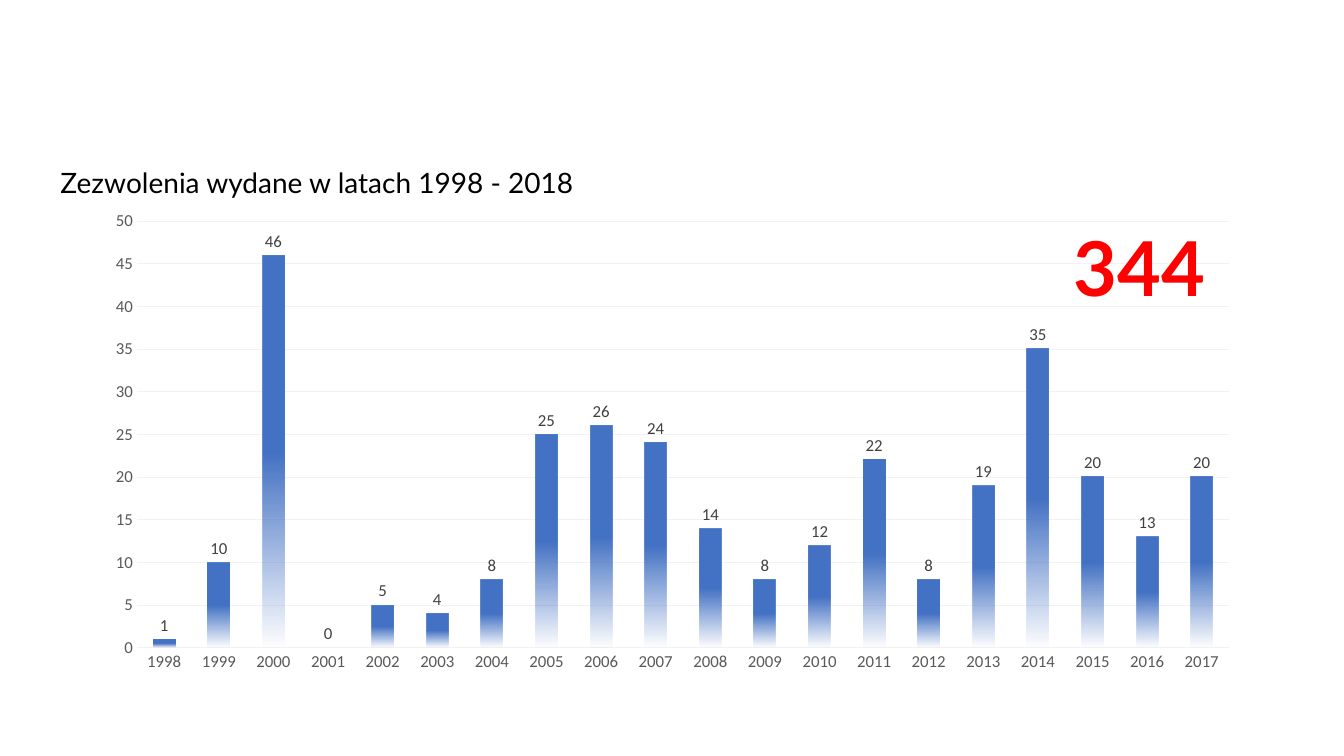
from pptx import Presentation
from pptx.chart.data import CategoryChartData
from pptx.dml.color import RGBColor
from pptx.enum.chart import XL_CHART_TYPE, XL_LABEL_POSITION, XL_TICK_MARK
from pptx.enum.text import MSO_ANCHOR, PP_ALIGN
from pptx.oxml import parse_xml
from pptx.oxml.ns import nsdecls
from pptx.util import Inches, Pt

BLACK = RGBColor(0x00, 0x00, 0x00)
RED = RGBColor(0xFF, 0x00, 0x00)
BLUE = RGBColor(0x44, 0x72, 0xC4)
AXIS_GREY = RGBColor(0x59, 0x59, 0x59)
LABEL_GREY = RGBColor(0x40, 0x40, 0x40)
GRID_GREY = RGBColor(0xF2, 0xF2, 0xF2)


def style_font(font, name, size, color, bold=False):
    font.name = name
    font.size = Pt(size)
    font.bold = bold
    font.color.rgb = color


prs = Presentation()
prs.slide_width = Inches(13.33)
prs.slide_height = Inches(7.5)
slide = prs.slides.add_slide(prs.slide_layouts[5])

# Permits per year
permits = [1, 10, 46, 0, 5, 4, 8, 25, 26, 24,
           14, 8, 12, 22, 8, 19, 35, 20, 13, 20]
permit_data = CategoryChartData()
permit_data.categories = [str(year) for year in range(1998, 2018)]
permit_data.add_series("Series 1", permits)
chart = slide.shapes.add_chart(
    XL_CHART_TYPE.COLUMN_CLUSTERED, Inches(0.92), Inches(2),
    Inches(11.5), Inches(4.76), permit_data).chart
chart.has_legend = False
chart.has_title = False
style_font(chart.font, "Calibri", 10, BLACK)

for axis in (chart.category_axis, chart.value_axis):
    axis.major_tick_mark = XL_TICK_MARK.NONE
    axis.minor_tick_mark = XL_TICK_MARK.NONE
    axis.format.line.fill.background()
    style_font(axis.tick_labels.font, "Calibri", 12, AXIS_GREY)
chart.value_axis.minimum_scale = 0
chart.value_axis.maximum_scale = 50
chart.value_axis.major_unit = 5
gridline = chart.value_axis.major_gridlines.format.line
gridline.color.rgb = GRID_GREY
gridline.width = Pt(0.75)

plot = chart.plots[0]
plot.gap_width = 150
plot.vary_by_categories = False
plot.has_data_labels = True
labels = plot.data_labels
labels.show_value = True
labels.position = XL_LABEL_POSITION.OUTSIDE_END
style_font(labels.font, "Calibri", 12, LABEL_GREY)

# Bars stay solid to the middle, then fade out towards the axis
bars = plot.series[0]
bars.invert_if_negative = False
bars.format.fill.background()
bar_properties = bars._element.spPr
bar_properties.replace(bar_properties[0], parse_xml(
    f'<a:gradFill {nsdecls("a")} rotWithShape="1"><a:gsLst>'
    f'<a:gs pos="0"><a:srgbClr val="{BLUE}"/></a:gs>'
    f'<a:gs pos="50000"><a:srgbClr val="{BLUE}"/></a:gs>'
    f'<a:gs pos="100000"><a:srgbClr val="{BLUE}"><a:alpha val="0"/></a:srgbClr></a:gs>'
    '</a:gsLst><a:lin ang="5400000" scaled="0"/></a:gradFill>'))

# Heading and total
heading = slide.shapes.title
heading.left, heading.top = Inches(0.5), Inches(1.59)
heading.width, heading.height = Inches(8.43), Inches(0.44)
total = slide.shapes.add_textbox(Inches(10.55), Inches(2.14), Inches(1.87), Inches(1.01))

for box, wording, size, color, bold in (
        (heading, "Zezwolenia wydane w latach 1998 - 2018", 20, BLACK, False),
        (total, "344", 54, RED, True)):
    frame = box.text_frame
    frame.text = wording
    frame.word_wrap = True
    frame.vertical_anchor = MSO_ANCHOR.TOP
    frame.paragraphs[0].alignment = PP_ALIGN.LEFT
    style_font(frame.paragraphs[0].runs[0].font, "Lato", size, color, bold)

prs.save("out.pptx")
